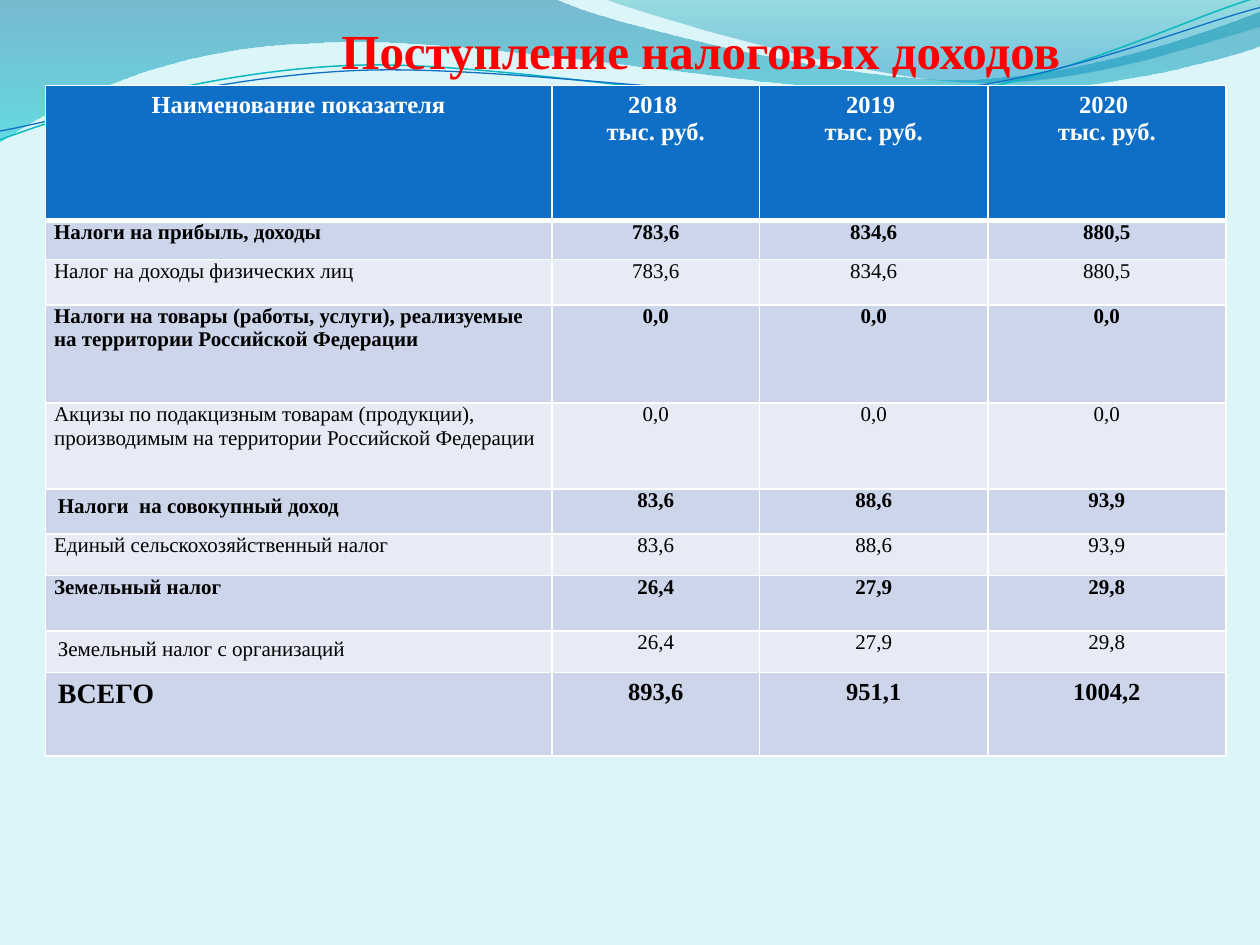
from lxml.etree import SubElement
from pptx import Presentation
from pptx.dml.color import RGBColor
from pptx.enum.text import MSO_ANCHOR, PP_ALIGN
from pptx.oxml import parse_xml
from pptx.oxml.ns import nsdecls, qn
from pptx.util import Inches, Pt

FONT = "Times New Roman"
COLORS = {
    "back": "DBF5F9", "title": "FF0000", "head": "0F6FC6", "white": "FFFFFF",
    "text": "000000", "dark": "CCD5EA", "light": "E7EBF5",
    "teal": "0AB8BF", "blue": "0F6FC6",
}
TITLE = "Поступление налоговых доходов "
HEAD = ["Наименование показателя", "2018 \nтыс. руб.", "2019 \nтыс. руб.",
        "2020 \nтыс. руб."]
ROWS = [
    ("Налоги на прибыль, доходы", "783,6", "834,6", "880,5"),
    ("Налог на доходы физических лиц", "783,6", "834,6", "880,5"),
    ("Налоги на товары (работы, услуги), реализуемые на территории "
     "Российской Федерации", "0,0", "0,0", "0,0"),
    ("Акцизы по подакцизным товарам (продукции), производимым на территории "
     "Российской Федерации", "0,0", "0,0", "0,0"),
    ("Налоги  на совокупный доход", "83,6", "88,6", "93,9"),
    ("Единый сельскохозяйственный налог", "83,6", "88,6", "93,9"),
    ("Земельный налог", "26,4", "27,9", "29,8"),
    ("Земельный налог с организаций", "26,4", "27,9", "29,8"),
    ("ВСЕГО", "893,6", "951,1", "1004,2"),
]
WIDTHS = [4.02, 1.65, 1.81, 1.89]
HEIGHTS = [1.07, 0.31, 0.36, 0.78, 0.68, 0.36, 0.33, 0.44, 0.33, 0.66]
PADDED = {(5, 0), (8, 0)}  # names that keep the full cell margins

# A pair is a straight step, six numbers are a Bezier step.
# Gradient stops are colour, alpha in percent, position in percent.
WAVES = [
    ([(0, 0), (4.4, -0.01), (4.76, 0.17, 6.64, 0.63, 7.58, 0.63),
      (8.53, 0.63, 9.58, 0.26, 10, 0.09), (10.01, 0.36),
      (9.83, 0.44, 8.7, 0.76, 7.46, 0.75), (6.22, 0.75, 3.82, 0.28, 2.57, 0.34),
      (1.29, 0.36, 0.46, 0.83, -0.01, 1.13)],
     [("0074A1", 45, 0), ("00C6CF", 55, 100)]),
    ([(4.79, -0.01), (5.09, 0.11, 6.82, 0.62, 7.69, 0.65),
      (8.56, 0.69, 9.61, 0.32, 10, 0.21), (10, 0)],
     [("00A1A9", 30, 0), ("008BBF", 45, 80)]),
]
CURVES = [
    ([(0, 1.11), (0.48, 0.93, 1.58, 0.57, 2.77, 0.52),
      (3.95, 0.47, 5.93, 0.89, 7.13, 0.8),
      (8.33, 0.71, 9.38, 0.15, 9.98, -0.02)], "teal", 0.85),
    ([(0, 1.04), (0.47, 0.96, 1.64, 0.61, 2.83, 0.56),
      (4.03, 0.51, 5.97, 0.84, 7.17, 0.75),
      (8.36, 0.67, 9.41, 0.21, 10, 0.06)], "blue", 0.75),
]


def color(name):
    return RGBColor.from_string(COLORS[name])


def draw(slide, steps, close):
    """Lay every knot as a line end, then fold Bezier knots into curves."""
    knots = [(step[i], step[i + 1]) for step in steps
             for i in range(0, len(step), 2)]
    points = [(round(x * 100), round(y * 100)) for x, y in knots]
    build = slide.shapes.build_freeform(*points[0], scale=Inches(0.01))
    build.add_line_segments(points[1:], close=close)
    shape = build.convert_to_shape()
    shape.shadow.inherit = False
    lines = iter(list(shape.element.iter(qn("a:lnTo"))))
    for step in steps[1:]:
        line = next(lines)
        if len(step) == 2:
            continue
        line.addprevious(parse_xml(f'<a:cubicBezTo {nsdecls("a")}/>'))
        curve = line.getprevious()
        for part in (line, next(lines), next(lines)):
            curve.append(part[0])
            part.getparent().remove(part)
    return shape


def add_wave(slide, steps, stops):
    shape = draw(slide, steps, True)
    shape.line.fill.background()
    marks = "".join(
        f'<a:gs pos="{pos * 1000}"><a:srgbClr val="{tone}">'
        f'<a:alpha val="{alpha * 1000}"/></a:srgbClr></a:gs>'
        for tone, alpha, pos in stops)
    grad = parse_xml(f'<a:gradFill {nsdecls("a")}><a:gsLst>{marks}</a:gsLst>'
                     '<a:lin ang="5400000" scaled="0"/></a:gradFill>')
    shape.element.spPr.find(qn("a:custGeom")).addnext(grad)


def add_curve(slide, steps, tone, width):
    shape = draw(slide, steps, False)
    shape.fill.background()
    shape.line.color.rgb = color(tone)
    shape.line.width = Pt(width)


def style(para, size, bold, tone, align):
    para.alignment = align
    font = para.font
    font.name, font.size, font.bold = FONT, Pt(size), bold
    font.color.rgb = color(tone)


def add_border(cell, row):
    props = cell._tc.get_or_add_tcPr()
    for side in "LRTB":
        thick = (row, side) in {(0, "B"), (1, "T")}
        line = SubElement(props, qn(f"a:ln{side}"), w=str(Pt(3 if thick else 1)))
        fill = SubElement(line, qn("a:solidFill"))
        SubElement(fill, qn("a:srgbClr"), val=COLORS["white"])


def fill_cell(cell, row, col, text):
    head, total = row == 0, row == len(ROWS)
    cell.text = text
    if not (head or total or (row, col) in PADDED):
        cell.margin_left = cell.margin_right = Inches(0.07)
        cell.margin_top = cell.margin_bottom = 0
    size = 16 if total and col == 0 else 14 if head or total else 12
    align = PP_ALIGN.CENTER if head or col else PP_ALIGN.LEFT
    for para in cell.text_frame.paragraphs:
        style(para, size, head or row % 2 == 1, "white" if head else "text", align)
    add_border(cell, row)
    cell.fill.solid()
    cell.fill.fore_color.rgb = color("head" if head else "dark" if row % 2 else "light")


def add_table(slide):
    table = slide.shapes.add_table(
        len(HEIGHTS), len(WIDTHS), Inches(0.36), Inches(0.68),
        Inches(sum(WIDTHS)), Inches(sum(HEIGHTS))).table
    for column, width in zip(table.columns, WIDTHS):
        column.width = Inches(width)
    for r, values in enumerate([HEAD, *ROWS]):
        table.rows[r].height = Inches(HEIGHTS[r])
        for c, text in enumerate(values):
            fill_cell(table.cell(r, c), r, c, text)


def add_title(slide):
    title = slide.shapes.title
    title.left, title.top = Inches(1.57), Inches(0.16)
    title.width, title.height = Inches(8.1), Inches(0.47)
    frame = title.text_frame
    frame.text = TITLE
    frame.vertical_anchor = MSO_ANCHOR.BOTTOM
    frame.margin_left = frame.margin_top = frame.margin_bottom = 0
    frame.margin_right = Inches(0.02)
    style(frame.paragraphs[0], 28, True, "title", PP_ALIGN.CENTER)


def main():
    deck = Presentation()
    deck.slide_width, deck.slide_height = Inches(10), Inches(7.5)
    slide = deck.slides.add_slide(deck.slide_layouts[5])
    slide.background.fill.solid()
    slide.background.fill.fore_color.rgb = color("back")
    for wave in WAVES:
        add_wave(slide, *wave)
    for curve in CURVES:
        add_curve(slide, *curve)
    # Bring the title in front of the waves.
    slide.shapes._spTree.append(slide.shapes.title.element)
    add_title(slide)
    add_table(slide)
    deck.save("out.pptx")


if __name__ == "__main__":
    main()
